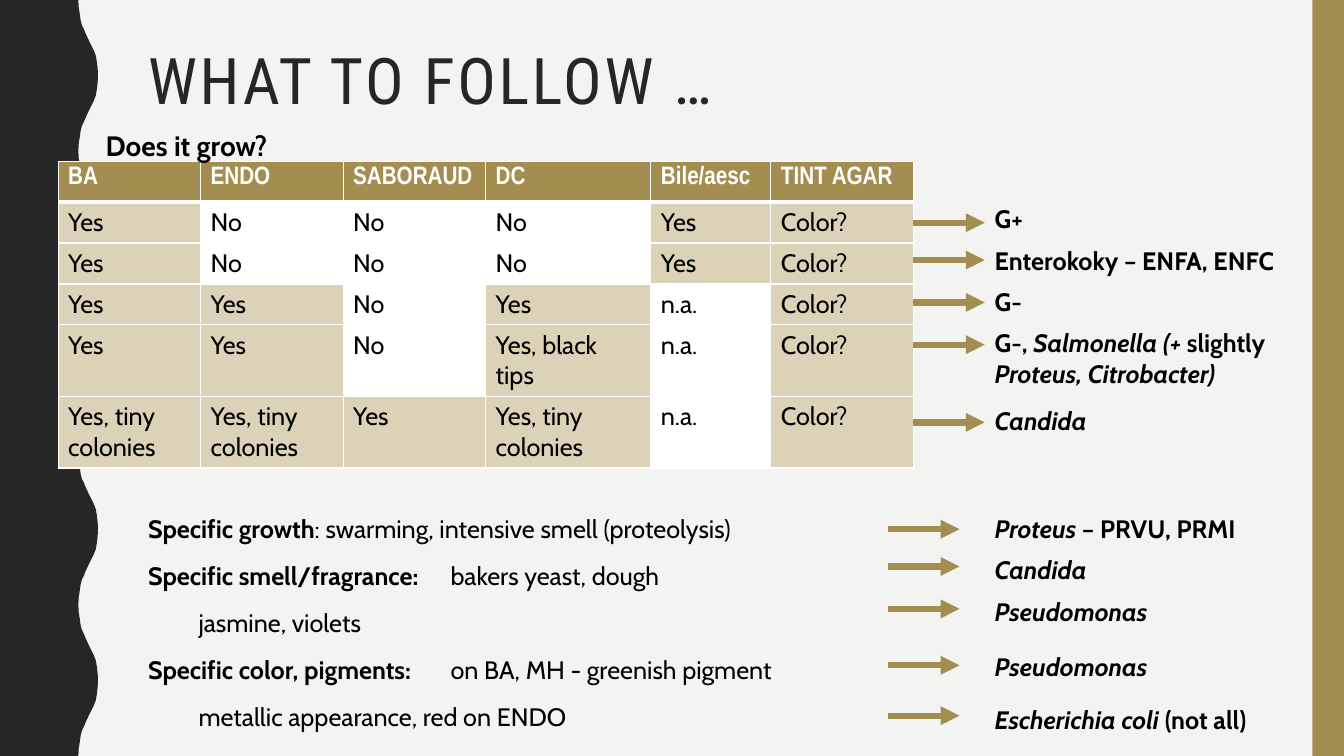
from dataclasses import dataclass
from itertools import accumulate

from lxml.etree import SubElement
from pptx import Presentation
from pptx.dml.color import RGBColor
from pptx.enum.shapes import MSO_CONNECTOR as Connector, MSO_SHAPE as Preset
from pptx.enum.text import MSO_ANCHOR as Anchor, MSO_AUTO_SIZE as AutoSize, PP_ALIGN as Align
from pptx.oxml.ns import qn
from pptx.util import Pt


@dataclass(frozen=True)
class Theme:
    paper: str = "F3F3F2"
    dark: str = "262626"
    gold: str = "A38D51"
    sand: str = "DCD2B8"
    white: str = "FFFFFF"
    black: str = "000000"
    title_font: str = "Roboto Condensed"
    header_font: str = "Arial Narrow"
    body_font: str = "Cabin"
    title_size: float = 45.9
    question_size: float = 20
    body_size: float = 18


@dataclass(frozen=True)
class Box:
    left: float
    top: float
    width: float
    height: float

    def emu(self):
        return Pt(self.left), Pt(self.top), Pt(self.width), Pt(self.height)


THEME = Theme()
PLAIN, BOLD, ITALIC = (False, False), (True, False), (True, True)

WAVE_PERIOD = 108
WAVE_HALF = [(56, 0), (56.2, 5), (57, 10), (57.6, 14.4), (58.5, 18), (60, 21),
             (61.2, 24), (62.6, 27), (64, 30), (65.5, 33), (67, 36), (68.4, 39.6),
             (69.2, 44), (69.8, 49), (70, 54)]

GROWTH_WIDTHS = [101.8, 101.8, 101.8, 118, 85.8, 101.8]
GROWTH_ROWS = [
    ["BA", "ENDO", "SABORAUD", "DC", "Bile/aesc", "TINT AGAR"],
    ["Yes", "No", "No", "No", "Yes", "Color?"],
    ["Yes", "No", "No", "No", "Yes", "Color?"],
    ["Yes", "Yes", "No", "Yes", "n.a.", "Color?"],
    ["Yes", "Yes", "No", "Yes, black tips", "n.a.", "Color?"],
    ["Yes, tiny colonies", "Yes, tiny colonies", "Yes", "Yes, tiny colonies", "n.a.", "Color?"],
]
GROWTH_RESULTS = [
    (17.3, 0, [("G+", BOLD)]),
    (44, 8, [("Enterokoky – ENFA, ENFC", BOLD)]),
    (74.2, 8, [("G-", BOLD)]),
    (104.4, 8, [("G-, ", BOLD), ("Salmonella (+ ", ITALIC), ("slightly ", BOLD),
                ("Proteus, Citrobacter)", ITALIC)]),
    (159.9, 12, [("Candida", ITALIC)]),
]
TRAITS = [
    [("Specific growth", BOLD), (": swarming, intensive smell (proteolysis)", PLAIN)],
    [("Specific smell/fragrance:\t", BOLD), ("bakers yeast, dough", PLAIN)],
    [("\tjasmine, violets", PLAIN)],
    [("Specific color, pigments:\t", BOLD), ("on BA, MH - greenish pigment", PLAIN)],
    [("\tmetallic appearance, red on ENDO", PLAIN)],
]
TRAIT_RESULTS = [
    (15.1, 0, [("Proteus", ITALIC), (" – PRVU, PRMI", BOLD)]),
    (41.7, 8, [("Candida", ITALIC)]),
    (72, 8, [("Pseudomonas", ITALIC)]),
    (112.3, 18, [("Pseudomonas", ITALIC)]),
    (148.3, 16, [("Escherichia coli ", ITALIC), ("(not all)", BOLD)]),
]


def rgb(code):
    return RGBColor.from_string(code)


def style(paragraph, face, size, color, bold=None):
    font = paragraph.font
    font.name, font.size, font.bold = face, Pt(size), bold
    font.color.rgb = rgb(color)


def write_runs(paragraph, runs):
    style(paragraph, THEME.body_font, THEME.body_size, THEME.black)
    for text, (bold, italic) in runs:
        run = paragraph.add_run()
        run.text = text
        run.font.bold, run.font.italic = bold, italic


def next_paragraph(frame, index):
    return frame.add_paragraph() if index else frame.paragraphs[0]


def paint(shape, color):
    shape.shadow.inherit = False
    shape.fill.solid()
    shape.fill.fore_color.rgb = rgb(color)
    shape.line.fill.background()


def draw_edges(slide, box):
    half_back = [(x, WAVE_PERIOD - y) for x, y in WAVE_HALF[-2:0:-1]]
    period = WAVE_HALF + half_back
    count = round(box.height / WAVE_PERIOD)
    wave = [(x, y + WAVE_PERIOD * turn) for turn in range(count) for x, y in period]
    outline = wave + [(WAVE_HALF[0][0], box.height), (0, box.height)]
    builder = slide.shapes.build_freeform(Pt(box.left), Pt(box.top), scale=1.0)
    builder.add_line_segments([(Pt(box.left + x), Pt(box.top + y)) for x, y in outline], close=True)
    paint(builder.convert_to_shape(), THEME.dark)
    band = Box(box.left + box.width - 22.5, box.top, 22.5, box.height)
    paint(slide.shapes.add_shape(Preset.RECTANGLE, *band.emu()), THEME.gold)


def draw_title(slide, box):
    title = slide.shapes.title
    title.left, title.top, title.width, title.height = box.emu()
    frame = title.text_frame
    frame.auto_size, frame.vertical_anchor = AutoSize.NONE, Anchor.MIDDLE
    heading = frame.paragraphs[0]
    heading.alignment, heading.line_spacing = Align.LEFT, 0.9
    style(heading, THEME.title_font, THEME.title_size, THEME.dark)
    run = heading.add_run()
    run.text = "WHAT TO FOLLOW …"
    run._r.get_or_add_rPr().set("spc", "200")


def set_borders(cell, bottom):
    properties = cell._tc.get_or_add_tcPr()
    for side, width in (("lnL", 1), ("lnR", 1), ("lnT", 1), ("lnB", bottom)):
        edge = SubElement(properties, qn(f"a:{side}"), w=str(Pt(width)))
        SubElement(SubElement(edge, qn("a:solidFill")), qn("a:srgbClr"), val=THEME.white)


def draw_growth_table(slide, box):
    rows, columns = len(GROWTH_ROWS), len(GROWTH_WIDTHS)
    growth = slide.shapes.add_table(rows, columns, *box.emu()).table
    for column, width in zip(growth.columns, GROWTH_WIDTHS):
        column.width = Pt(width)
    for r, answers in enumerate(GROWTH_ROWS):
        growth.rows[r].height = Pt(29.2)
        for c, answer in enumerate(answers):
            cell = growth.cell(r, c)
            header = r == 0
            set_borders(cell, 3 if header else 1)
            negative = answer in ("No", "n.a.")
            color = THEME.gold if header else THEME.white if negative else THEME.sand
            cell.fill.solid()
            cell.fill.fore_color.rgb = rgb(color)
            cell.text = answer
            style(cell.text_frame.paragraphs[0],
                  THEME.header_font if header else THEME.body_font, THEME.body_size,
                  THEME.white if header else THEME.black, header)


def draw_question(slide, box):
    frame = slide.shapes.add_textbox(*box.emu()).text_frame
    frame.word_wrap = False
    frame.text = "Does it grow?"
    style(frame.paragraphs[0], THEME.body_font, THEME.question_size, THEME.black, True)


def draw_arrow(slide, left, y, length):
    arrow = slide.shapes.add_connector(Connector.STRAIGHT, Pt(left), Pt(y), Pt(left + length), Pt(y))
    arrow.line.width = Pt(4.5)
    arrow.line.color.rgb = rgb(THEME.gold)
    SubElement(arrow.line._get_or_add_ln(), qn("a:tailEnd"), type="triangle")
    SubElement(arrow._element.spPr, qn("a:effectLst"))


def draw_results(slide, box, results, arrow_gap):
    frame = slide.shapes.add_textbox(*box.emu()).text_frame
    frame.word_wrap = True
    for index, (arrow_y, space, runs) in enumerate(results):
        result = next_paragraph(frame, index)
        result.space_before = Pt(space)
        write_runs(result, runs)
        draw_arrow(slide, box.left - arrow_gap, box.top + arrow_y, 51)


def draw_traits(slide, box):
    body = slide.placeholders[1]
    body.left, body.top, body.width, body.height = box.emu()
    frame = body.text_frame
    frame.auto_size, frame.vertical_anchor = AutoSize.NONE, Anchor.TOP
    for index, runs in enumerate(TRAITS):
        trait = next_paragraph(frame, index)
        properties = trait._p.get_or_add_pPr()
        properties.set("marL", "0")
        properties.set("indent", "0")
        SubElement(properties, qn("a:buNone"))
        SubElement(SubElement(properties, qn("a:tabLst")), qn("a:tab"), pos=str(Pt(216)), algn="l")
        trait.space_before = Pt(12 if index else 0)
        write_runs(trait, runs)


def main():
    deck = Presentation()
    deck.slide_width, deck.slide_height = Pt(960), Pt(540)
    slide = deck.slides.add_slide(deck.slide_layouts[1])
    slide.background.fill.solid()
    slide.background.fill.fore_color.rgb = rgb(THEME.paper)
    draw_edges(slide, Box(0, 0, 960, 540))
    draw_title(slide, Box(98.6, 30.2, 801.4, 59.8))
    table_width = list(accumulate(GROWTH_WIDTHS))[-1]
    draw_growth_table(slide, Box(41.5, 115.2, table_width, 175.2))
    draw_results(slide, Box(703.4, 141.8, 241.2, 174.2), GROWTH_RESULTS, 51)
    draw_traits(slide, Box(98.6, 362.9, 553.7, 164.9))
    draw_results(slide, Box(703.4, 362.9, 256.3, 167), TRAIT_RESULTS, 69)
    draw_question(slide, Box(68.4, 88.6, 141.1, 31.7))
    deck.save("out.pptx")


if __name__ == "__main__":
    main()
